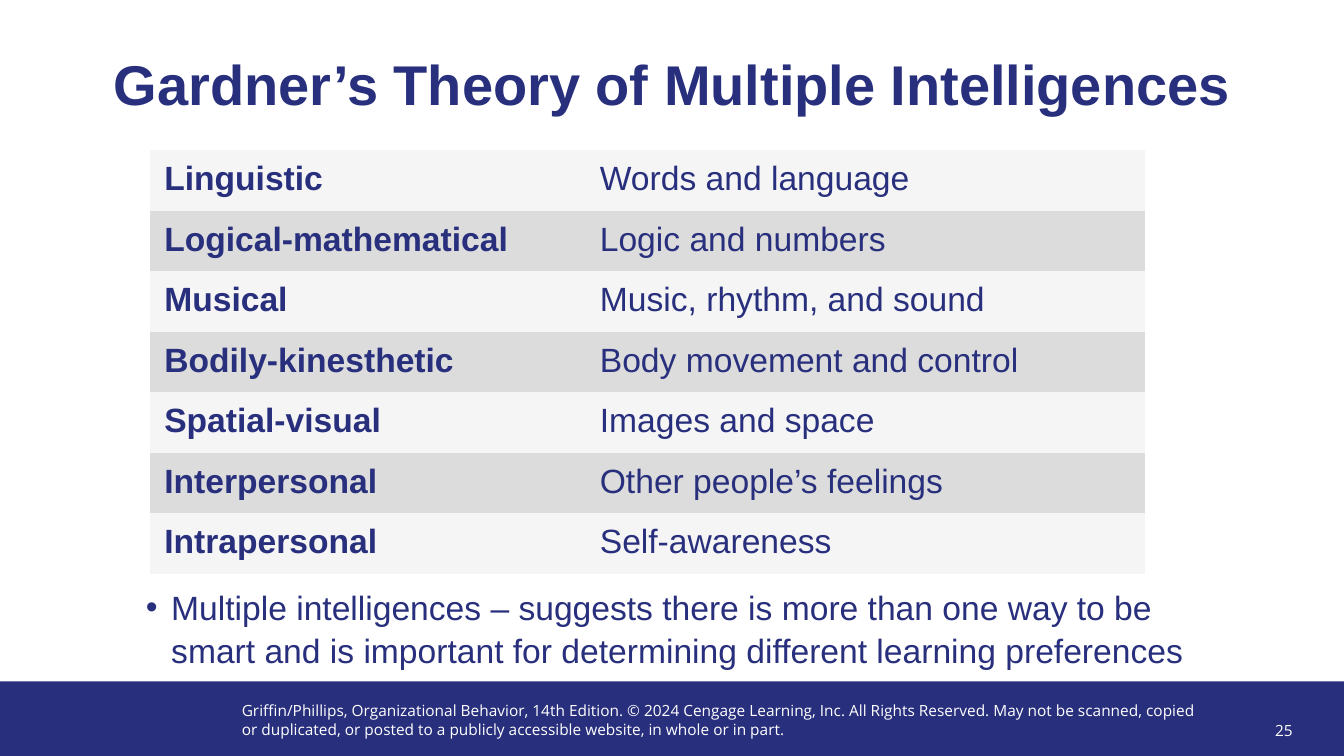
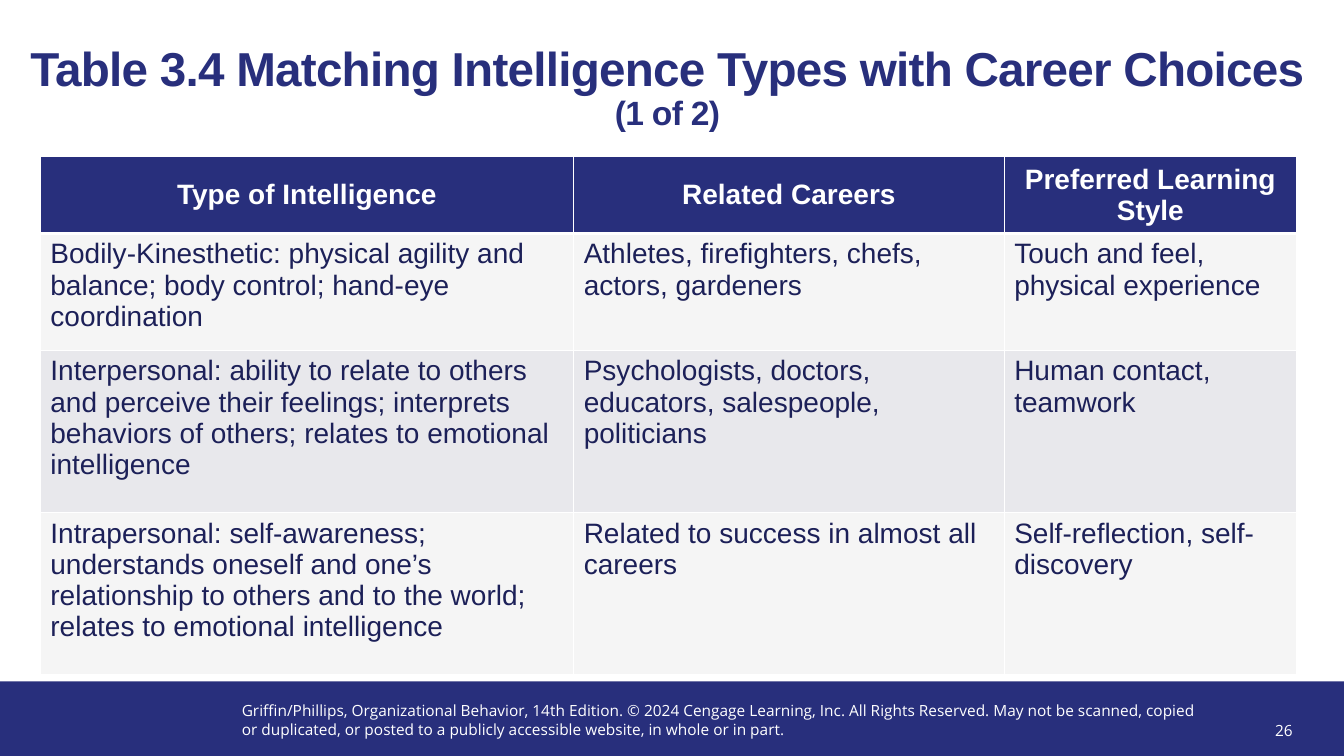
from lxml import etree
from pptx import Presentation
from pptx import util as u
from pptx.dml.color import RGBColor
from pptx.enum import shapes, text
from pptx.oxml.ns import qn

WIDTH, HEIGHT = 13.33, 7.5
BAND_HEIGHT = 0.74
COLORS = {"navy": "282F7C", "ink": "1C2058", "white": "FFFFFF", "light": "F5F5F5",
          "grey": "DCDCDC", "lilac": "E8E8EC"}
FOOTER = ("Griffin/Phillips, Organizational Behavior, 14th Edition. © 2024 Cengage Learning, Inc. "
          "All Rights Reserved. May not be scanned, copied or duplicated, or posted to a publicly "
          "accessible website, in whole or in part.")
FIRST_NUMBER = 25

INTELLIGENCES = [
    ("Linguistic", "Words and language"),
    ("Logical-mathematical", "Logic and numbers"),
    ("Musical", "Music, rhythm, and sound"),
    ("Bodily-kinesthetic", "Body movement and control"),
    ("Spatial-visual", "Images and space"),
    ("Interpersonal", "Other people’s feelings"),
    ("Intrapersonal", "Self-awareness"),
]
TAKEAWAY = ("Multiple intelligences – suggests there is more than one way to be smart and is "
            "important for determining different learning preferences")
CAREERS = [
    ("Type of Intelligence", "Related Careers", "Preferred Learning Style"),
    ("Bodily-Kinesthetic: physical agility and balance; body control; hand-eye coordination",
     "Athletes, firefighters, chefs, actors, gardeners",
     "Touch and feel, physical experience"),
    ("Interpersonal: ability to relate to others and perceive their feelings; interprets "
     "behaviors of others; relates to emotional intelligence",
     "Psychologists, doctors, educators, salespeople, politicians",
     "Human contact, teamwork"),
    ("Intrapersonal: self-awareness; understands oneself and one’s relationship to others and "
     "to the world; relates to emotional intelligence",
     "Related to success in almost all careers",
     "Self-reflection, self-discovery"),
]


def rgb(name):
    return RGBColor.from_string(COLORS[name])


def add_run(paragraph, words, size, color="navy", bold=False, face="Arial"):
    run = paragraph.add_run()
    run.text = words
    for key, value in {"size": u.Pt(size), "bold": bold, "name": face}.items():
        setattr(run.font, key, value)
    run.font.color.rgb = rgb(color)
    return run


def add_text(slide, place, **paragraph_format):
    """Add a wrapping text box and return its frame and first paragraph."""
    frame = slide.shapes.add_textbox(*map(u.Inches, place)).text_frame
    frame.word_wrap = True
    paragraph = frame.paragraphs[0]
    for key, value in paragraph_format.items():
        setattr(paragraph, key, value)
    return frame, paragraph


def add_title(slide, place, lines, spacing=0):
    """Lines are (words, size) pairs, set one under another."""
    _, title = add_text(slide, place, alignment=text.PP_ALIGN.CENTER, line_spacing=0.9)
    for index, (words, size) in enumerate(lines):
        if index:
            title.add_line_break()
        run = add_run(title, words, size, bold=True)
        if spacing:
            run.font._element.set("spc", str(int(spacing * 100)))


def add_footer(slide, number):
    top = HEIGHT - BAND_HEIGHT
    band = slide.shapes.add_shape(shapes.MSO_SHAPE.RECTANGLE,
                                  *map(u.Inches, (0, top, WIDTH, BAND_HEIGHT)))
    band.shadow.inherit = False
    band.fill.solid()
    band.fill.fore_color.rgb = rgb("navy")
    band.line.fill.background()
    style = {"size": 11, "color": "white", "face": "Open Sans"}
    _, notice = add_text(slide, (2.3, top + 0.15, 9.8, 0.47))
    add_run(notice, FOOTER, **style)
    frame, page = add_text(slide, (12.12, 7.05, 0.8, 0.4), alignment=text.PP_ALIGN.RIGHT)
    frame.vertical_anchor = text.MSO_ANCHOR.MIDDLE
    add_run(page, str(number), **style)


def set_borders(cell, widths):
    """Widths in points for left, right, top and bottom; 0 means no line."""
    props = cell._tc.get_or_add_tcPr()
    for side, width in zip("LRTB", widths):
        line = etree.SubElement(props, qn(f"a:ln{side}"), w=str(u.Pt(width)))
        if width:
            fill = etree.SubElement(line, qn("a:solidFill"))
            etree.SubElement(fill, qn("a:srgbClr"), val=COLORS["white"])
        else:
            etree.SubElement(line, qn("a:noFill"))


def add_grid(slide, corner, widths, heights, rows, margins, cell_style):
    """cell_style(row, column) gives fill, borders, anchor, alignment and run format."""
    size = (sum(widths), sum(heights))
    table = slide.shapes.add_table(len(rows), len(widths),
                                   *map(u.Inches, corner + size)).table
    for tracks, lengths, key in ((table.columns, widths, "width"),
                                 (table.rows, heights, "height")):
        for track, length in zip(tracks, lengths):
            setattr(track, key, u.Inches(length))
    for r, row in enumerate(rows):
        for c, words in enumerate(row):
            cell = table.cell(r, c)
            fill, borders, anchor, alignment, run_format = cell_style(r, c)
            set_borders(cell, borders)
            cell.fill.solid()
            cell.fill.fore_color.rgb = rgb(fill)
            cell.vertical_anchor = anchor
            for side, margin in zip(("left", "right", "top", "bottom"), margins):
                setattr(cell, f"margin_{side}", u.Inches(margin))
            paragraph = cell.text_frame.paragraphs[0]
            paragraph.alignment = alignment
            add_run(paragraph, words, **run_format)


def intelligence_style(row, column):
    return (("light", "grey")[row % 2], (0, 0, 0, 0), text.MSO_ANCHOR.TOP,
            text.PP_ALIGN.LEFT, {"size": 24, "bold": column == 0})


def career_style(row, column):
    if row == 0:
        return ("navy", (1, 1, 1, 3), text.MSO_ANCHOR.MIDDLE, text.PP_ALIGN.CENTER,
                {"size": 20, "color": "white", "bold": True})
    return (("lilac", "light")[row % 2], (1, 1, 3 if row == 1 else 1, 1), text.MSO_ANCHOR.TOP,
            text.PP_ALIGN.LEFT, {"size": 20, "color": "ink"})


def add_bullet(slide, place, words):
    _, bullet = add_text(slide, place, line_spacing=1.06)
    props = bullet._p.get_or_add_pPr()
    indent = u.Inches(0.25)
    props.set("marL", str(indent))
    props.set("indent", str(-indent))
    color = etree.SubElement(props, qn("a:buClr"))
    etree.SubElement(color, qn("a:srgbClr"), val=COLORS["navy"])
    etree.SubElement(props, qn("a:buFont"), typeface="Arial")
    etree.SubElement(props, qn("a:buChar"), char="•")
    add_run(bullet, words, 24)


def build_theory(slide):
    add_title(slide, (0.52, 0.52, 12.29, 0.64),
              [("Gardner’s Theory of Multiple Intelligences", 40)])
    count = len(INTELLIGENCES)
    add_grid(slide, (1.49, 1.49), (4.32, 5.55), [4.1 / count] * count, INTELLIGENCES,
             (0.14, 0.14, 0.1, 0.1), intelligence_style)
    add_bullet(slide, (1.35, 5.75, 11.04, 0.85), TAKEAWAY)


def build_careers(slide):
    add_title(slide, (0.08, 0.4, 13.08, 0.96),
              [("Table 3.4 Matching Intelligence Types with Career Choices", 34),
               ("(1 of 2)", 24)], spacing=-0.5)
    add_grid(slide, (0.4, 1.55), (5.29, 4.27, 2.9), (0.75, 1.16, 1.61, 1.61), CAREERS,
             (0.1, 0.1, 0.05, 0.05), career_style)


def main():
    deck = Presentation()
    deck.slide_width, deck.slide_height = u.Inches(WIDTH), u.Inches(HEIGHT)
    for number, build in enumerate((build_theory, build_careers), FIRST_NUMBER):
        slide = deck.slides.add_slide(deck.slide_layouts[6])
        add_footer(slide, number)
        build(slide)
    deck.save("out.pptx")


if __name__ == "__main__":
    main()
